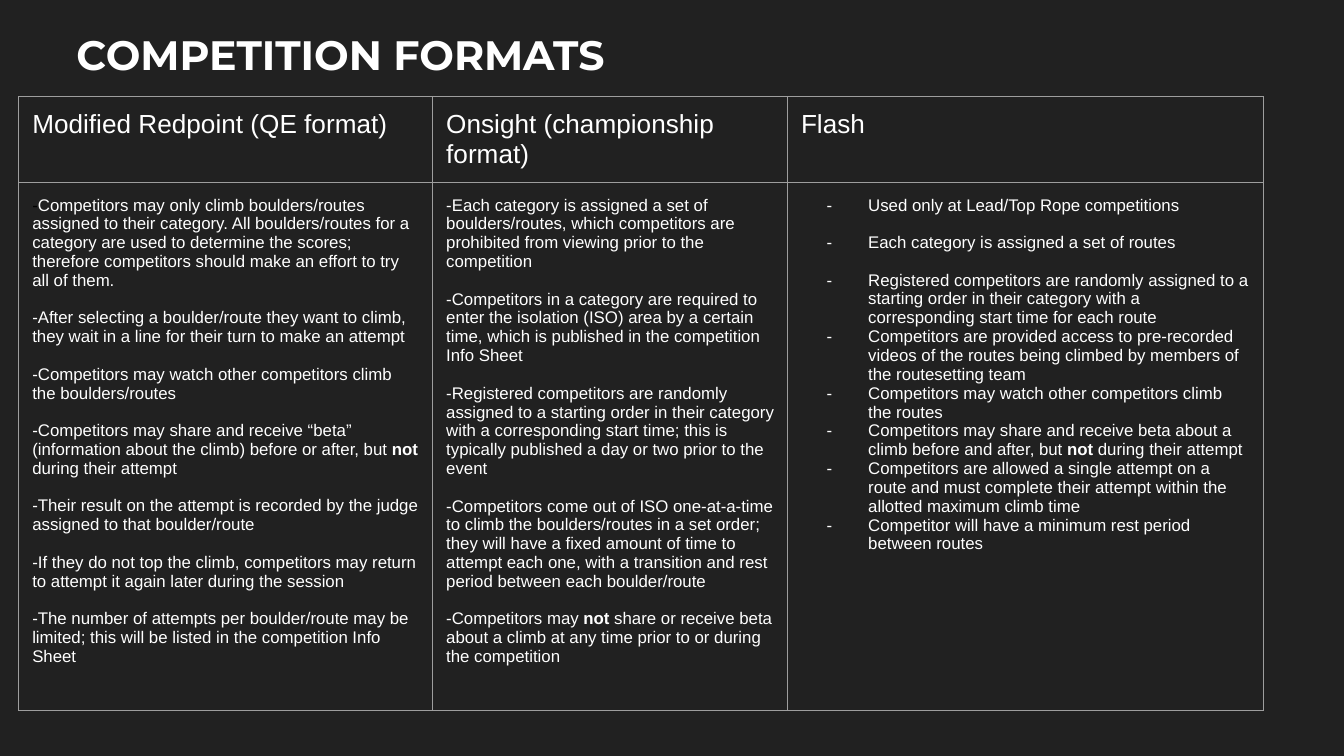
from dataclasses import dataclass

from lxml import etree
from pptx import Presentation
from pptx.dml.color import RGBColor
from pptx.enum.text import MSO_ANCHOR
from pptx.oxml.ns import qn
from pptx.util import Inches, Pt

TOP = MSO_ANCHOR.TOP
MARGINS = ("margin_left", "margin_top", "margin_right", "margin_bottom")
BORDERS = ("a:lnL", "a:lnR", "a:lnT", "a:lnB")


@dataclass(frozen=True)
class Theme:
    background: str = "212121"
    text: str = "FFFFFF"
    dark: str = "000000"
    border: str = "9E9E9E"
    border_width: float = 0.75
    title_font: str = "Montserrat"
    body_font: str = "Arial"
    title_size: float = 22
    heading_size: float = 14
    body_size: float = 9
    paragraph_gap: float = 10
    inset: float = 0.1


THEME = Theme()
TITLE_STYLE = {"name": THEME.title_font, "size": Pt(THEME.title_size), "bold": True}
HEADING_STYLE = {"name": THEME.body_font, "size": Pt(THEME.heading_size), "bold": False}
BODY_STYLE = {"name": THEME.body_font, "size": Pt(THEME.body_size), "bold": False}

COLUMN_WIDTHS = (3.08, 2.64, 3.54)
ROW_HEIGHTS = (0.63, 3.93)

# Each paragraph is a list of (text, emphasis) runs or a plain string.
REDPOINT = [
    [("-", "dark"),
     ("Competitors may only climb boulders/routes assigned to their category. "
      "All boulders/routes for a category are used to determine the scores; "
      "therefore competitors should make an effort to try all of them.", None)],
    "-After selecting a boulder/route they want to climb, they wait in a line "
    "for their turn to make an attempt",
    "-Competitors may watch other competitors climb the boulders/routes",
    [("-Competitors may share and receive “beta” (information about the climb) "
      "before or after, but ", None), ("not", "bold"), (" during their attempt", None)],
    "-Their result on the attempt is recorded by the judge assigned to that boulder/route",
    "-If they do not top the climb, competitors may return to attempt it again "
    "later during the session",
    "-The number of attempts per boulder/route may be limited; this will be "
    "listed in the competition Info Sheet",
]
ONSIGHT = [
    "-Each category is assigned a set of boulders/routes, which competitors are "
    "prohibited from viewing prior to the competition",
    "-Competitors in a category are required to enter the isolation (ISO) area by "
    "a certain time, which is published in the competition Info Sheet",
    "-Registered competitors are randomly assigned to a starting order in their "
    "category with a corresponding start time; this is typically published a day "
    "or two prior to the event",
    "-Competitors come out of ISO one-at-a-time to climb the boulders/routes in a "
    "set order; they will have a fixed amount of time to attempt each one, with a "
    "transition and rest period between each boulder/route",
    [("-Competitors may ", None), ("not", "bold"),
     (" share or receive beta about a climb at any time prior to or during the "
      "competition", None)],
]
FLASH = [
    "Used only at Lead/Top Rope competitions",
    "Each category is assigned a set of routes",
    "Registered competitors are randomly assigned to a starting order in their "
    "category with a corresponding start time for each route",
    "Competitors are provided access to pre-recorded videos of the routes being "
    "climbed by members of the routesetting team",
    "Competitors may watch other competitors climb the routes",
    [("Competitors may share and receive beta about a climb before and after, but ", None),
     ("not", "bold"), (" during their attempt", None)],
    "Competitors are allowed a single attempt on a route and must complete their "
    "attempt within the allotted maximum climb time",
    "Competitor will have a minimum rest period between routes",
]

# heading, paragraphs, number of gaps between paragraphs, bulleted
FORMATS = (
    ("Modified Redpoint (QE format)", REDPOINT, len(REDPOINT) - 1, False),
    ("Onsight (championship format)", ONSIGHT, len(ONSIGHT) - 1, False),
    ("Flash", FLASH, 2, True),
)


def set_margins(target):
    for margin in MARGINS:
        setattr(target, margin, Inches(THEME.inset))


def add_run(paragraph, text, style, emphasis=None):
    run = paragraph.add_run()
    run.text = text
    for name, value in style.items():
        setattr(run.font, name, value)
    if emphasis == "bold":
        run.font.bold = True
    color = THEME.dark if emphasis == "dark" else THEME.text
    run.font.color.rgb = RGBColor.from_string(color)


def add_dash(paragraph):
    """Give the paragraph a dash bullet with a hanging indent."""
    properties = paragraph._p.get_or_add_pPr()
    properties.set("marL", str(Inches(0.5)))
    properties.set("indent", str(Inches(-0.31)))
    color = etree.SubElement(properties, qn("a:buClr"))
    etree.SubElement(color, qn("a:srgbClr"), val=THEME.text)
    etree.SubElement(properties, qn("a:buFont"), typeface=THEME.body_font)
    etree.SubElement(properties, qn("a:buChar"), char="-")


def write_paragraphs(text_frame, paragraphs, style, gap_count=0, bulleted=False):
    for index, content in enumerate(paragraphs):
        paragraph = text_frame.paragraphs[0] if index == 0 else text_frame.add_paragraph()
        paragraph.space_after = Pt(THEME.paragraph_gap if index < gap_count else 0)
        if bulleted:
            add_dash(paragraph)
        runs = [(content, None)] if isinstance(content, str) else content
        for text, emphasis in runs:
            add_run(paragraph, text, style, emphasis)


def format_cell(cell):
    set_margins(cell)
    cell.vertical_anchor = TOP
    properties = cell._tc.get_or_add_tcPr()
    for border in BORDERS:
        line = etree.SubElement(properties, qn(border), w=str(Pt(THEME.border_width)))
        fill = etree.SubElement(line, qn("a:solidFill"))
        etree.SubElement(fill, qn("a:srgbClr"), val=THEME.border)
    cell.fill.background()


def add_title(slide, left, top, width, height):
    shape = slide.shapes.add_textbox(*map(Inches, (left, top, width, height)))
    text_frame = shape.text_frame
    text_frame.word_wrap = True
    set_margins(text_frame)
    write_paragraphs(text_frame, ["COMPETITION FORMATS"], TITLE_STYLE)


def add_format_table(slide, left, top):
    box = (left, top, sum(COLUMN_WIDTHS), sum(ROW_HEIGHTS))
    table = slide.shapes.add_table(
        len(ROW_HEIGHTS), len(COLUMN_WIDTHS), *map(Inches, box)).table
    table.first_row = False
    table.horz_banding = False
    for column, width in zip(table.columns, COLUMN_WIDTHS):
        column.width = Inches(width)
    for row, height in zip(table.rows, ROW_HEIGHTS):
        row.height = Inches(height)
    for cell in table.iter_cells():
        format_cell(cell)
    for index, (heading, paragraphs, gap_count, bulleted) in enumerate(FORMATS):
        write_paragraphs(table.cell(0, index).text_frame, [heading], HEADING_STYLE)
        write_paragraphs(table.cell(1, index).text_frame, paragraphs, BODY_STYLE,
                         gap_count, bulleted)


def main():
    presentation = Presentation()
    presentation.slide_width = Inches(10)
    presentation.slide_height = presentation.slide_width * 9 // 16
    slide = presentation.slides.add_slide(presentation.slide_layouts[6])
    slide.background.fill.solid()
    slide.background.fill.fore_color.rgb = RGBColor.from_string(THEME.background)
    add_format_table(slide, 0.14, 0.72)
    add_title(slide, 0.47, 0.12, 7.98, 0.57)
    presentation.save("out.pptx")


if __name__ == "__main__":
    main()
